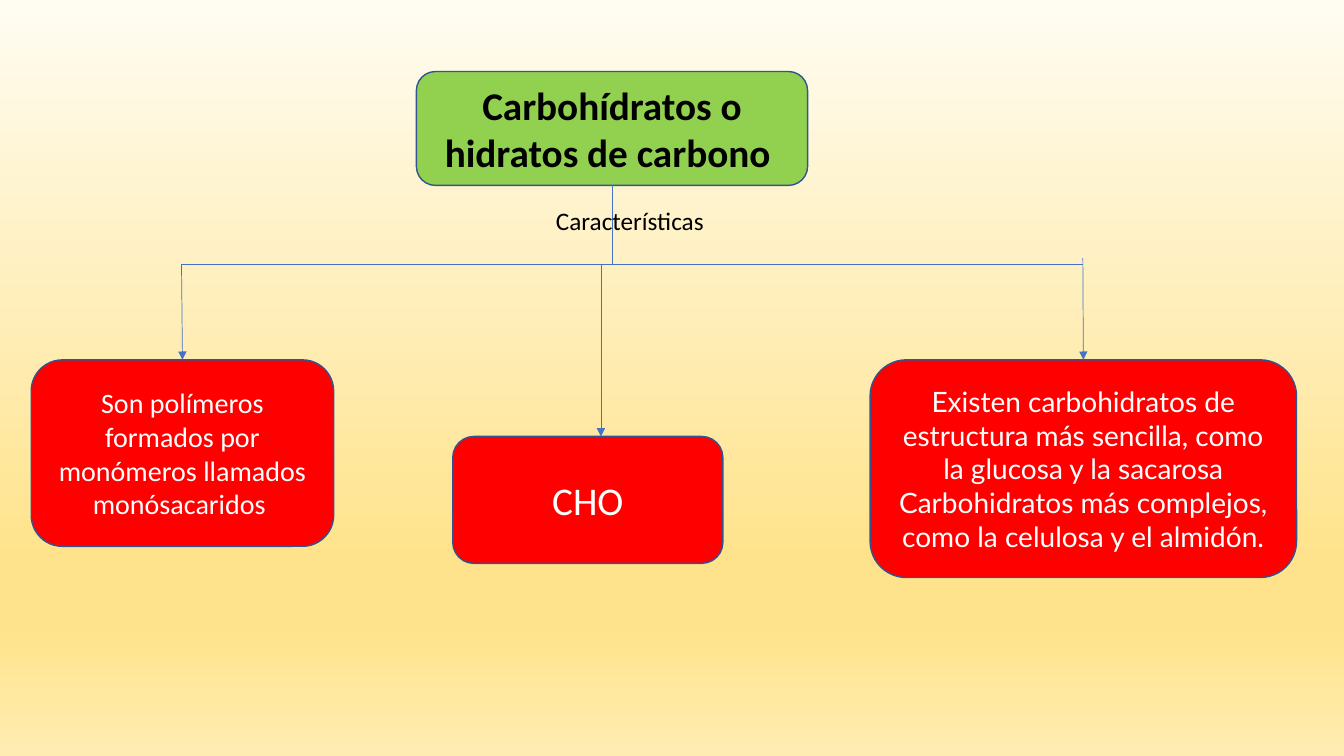
import pptx
import pptx.util
import pptx.dml.color
import pptx.enum.shapes
import pptx.enum.text
import pptx.oxml.ns
from lxml import etree

Inches = pptx.util.Inches
Pt = pptx.util.Pt
RGBColor = pptx.dml.color.RGBColor
qn = pptx.oxml.ns.qn

GREEN = RGBColor(0x92, 0xD0, 0x50)
RED = RGBColor(0xFF, 0x00, 0x00)
BLACK = RGBColor(0x00, 0x00, 0x00)
WHITE = RGBColor(0xFF, 0xFF, 0xFF)
OUTLINE = RGBColor(0x32, 0x54, 0x91)
BLUE = RGBColor(0x44, 0x72, 0xC4)

BACKGROUND = [(0, "FFFCF2"), (74, "FFE38C"), (83, "FFE38C"), (100, "FFECB2")]

BOXES = {
    "title": ((4.13, 0.71, 3.88, 1.13), GREEN, BLACK, "Calibri", 28, True,
              "Carbohídratos o hidratos de carbono "),
    "polymers": ((0.31, 3.57, 3, 1.85), RED, WHITE, "Calibri", 20, False,
                 "Son polímeros formados por monómeros llamados monósacaridos "),
    "kinds": ((8.63, 3.57, 4.23, 2.16), RED, WHITE, "Lato", 20, False,
              "Existen carbohidratos de estructura más sencilla, como la glucosa y la sacarosa\n"
              "Carbohidratos más complejos, como la celulosa y el almidón."),
    "cho": ((4.49, 4.33, 2.68, 1.26), RED, WHITE, "Calibri", 28, False, "CHO"),
}
LABEL = ((4.97, 1.99, 2.61, 0.4), "Características ")

BAR_Y = 2.62
LEFT_X, CHO_X, TITLE_X, RIGHT_X = 1.8, 5.96, 6.07, 10.74
LINES = [
    ((LEFT_X, BAR_Y), (RIGHT_X, BAR_Y), False, None, None),
    ((RIGHT_X, 2.56), (RIGHT_X, 3.57), True, None, "kinds"),
    ((CHO_X, BAR_Y), (CHO_X, 4.33), True, None, None),
    ((LEFT_X, BAR_Y), (LEFT_X, 3.57), True, None, "polymers"),
    ((TITLE_X, 1.84), (TITLE_X, BAR_Y), False, "title", None),
]


def write(sp, text, font, size, color, bold=False):
    tf = sp.text_frame
    tf.word_wrap = True
    tf.text = text
    for p in tf.paragraphs:
        p.alignment = pptx.enum.text.PP_ALIGN.CENTER
        for r in p.runs:
            r.font.name = font
            r.font.size = Pt(size)
            r.font.bold = bold
            r.font.color.rgb = color
    return tf


def paint_background(slide):
    fill = slide.background.fill
    fill.gradient()
    fill.gradient_angle = 270
    stops = slide.element.find(".//" + qn("a:gsLst"))
    for stop in list(stops):
        stops.remove(stop)
    for pos, color in BACKGROUND:
        stop = etree.SubElement(stops, qn("a:gs"), pos=str(pos * 1000))
        etree.SubElement(stop, qn("a:srgbClr"), val=color)


def add_box(slide, at, fill, color, font, size, bold, text):
    sp = slide.shapes.add_shape(
        pptx.enum.shapes.MSO_SHAPE.ROUNDED_RECTANGLE, *map(Inches, at))
    sp.shadow.inherit = False
    sp.fill.solid()
    sp.fill.fore_color.rgb = fill
    sp.line.color.rgb = OUTLINE
    sp.line.width = Pt(1)
    tf = write(sp, text, font, size, color, bold)
    tf.vertical_anchor = pptx.enum.text.MSO_ANCHOR.MIDDLE
    return sp


def add_line(slide, boxes, start, end, arrow, source, target):
    line = slide.shapes.add_connector(
        pptx.enum.shapes.MSO_CONNECTOR.STRAIGHT, *map(Inches, start + end))
    line.line.color.rgb = BLUE
    line.line.width = Pt(0.5)
    if arrow:
        etree.SubElement(line.line._get_or_add_ln(), qn("a:tailEnd"), type="triangle")
    etree.SubElement(line._element.spPr, qn("a:effectLst"))
    if source:
        line.begin_connect(boxes[source], 2)
    if target:
        line.end_connect(boxes[target], 0)


def main():
    prs = pptx.Presentation()
    prs.slide_width = Inches(13.33)
    prs.slide_height = Inches(7.5)
    slide = prs.slides.add_slide(prs.slide_layouts[6])
    paint_background(slide)

    boxes = {name: add_box(slide, *box) for name, box in BOXES.items()}
    for line in LINES:
        add_line(slide, boxes, *line)

    at, text = LABEL
    sp = slide.shapes.add_textbox(*map(Inches, at))
    tf = write(sp, text, "Calibri", 18, BLACK)
    tf.auto_size = pptx.enum.text.MSO_AUTO_SIZE.SHAPE_TO_FIT_TEXT

    prs.save("out.pptx")


if __name__ == "__main__":
    main()
